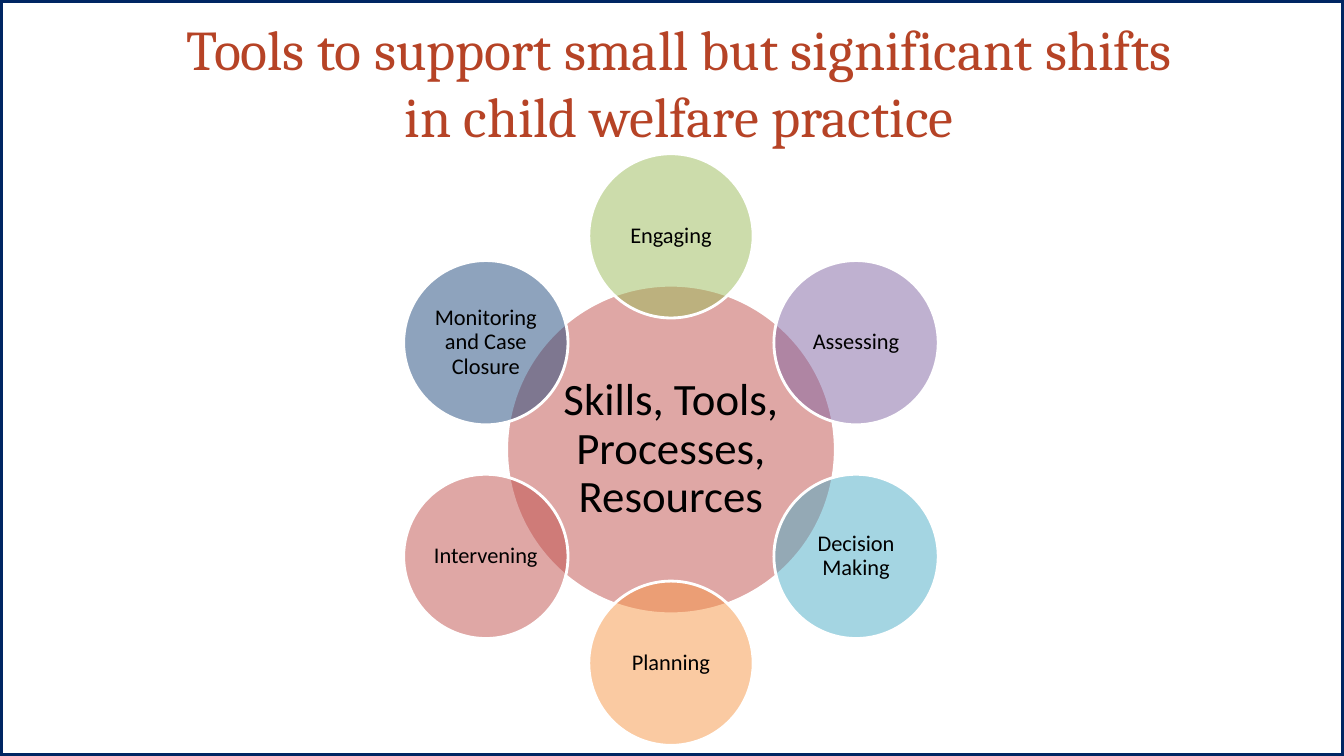
from math import cos, radians, sin

from lxml import etree
from pptx import Presentation
from pptx.dml.color import RGBColor
from pptx.enum.shapes import MSO_SHAPE
from pptx.enum.text import MSO_ANCHOR, PP_ALIGN
from pptx.oxml.ns import qn
from pptx.util import Inches, Pt

# Content
NAVY = RGBColor(0x00, 0x26, 0x63)
RUST = RGBColor(0xB6, 0x43, 0x26)
BLACK = RGBColor(0x00, 0x00, 0x00)
WHITE = RGBColor(0xFF, 0xFF, 0xFF)
RED = RGBColor(0xC0, 0x50, 0x4D)
GREEN = RGBColor(0x9B, 0xBB, 0x59)
PURPLE = RGBColor(0x80, 0x64, 0xA2)
TEAL = RGBColor(0x4B, 0xAC, 0xC6)
ORANGE = RGBColor(0xF7, 0x96, 0x46)
BLUE = RGBColor(0x1F, 0x49, 0x7D)

TITLE = "Tools to support small but significant shifts in child welfare practice"
HUB = "Skills, Tools, Processes, Resources"
STAGES = [  # clockwise from the top
    ("Engaging", GREEN),
    ("Assessing", PURPLE),
    ("Decision Making", TEAL),
    ("Planning", ORANGE),
    ("Intervening", RED),
    ("Monitoring and Case Closure", BLUE),
]

# Geometry in inches
SLIDE_W, SLIDE_H = 13.33, 7.5
CENTER_X, CENTER_Y = SLIDE_W / 2 - 0.01, 4.46
HUB_SIZE = 3.26
STAGE_SIZE = HUB_SIZE / 2
ORBIT = 2.12

presentation = Presentation()
presentation.slide_width = Inches(SLIDE_W)
presentation.slide_height = Inches(SLIDE_H)
slide = presentation.slides.add_slide(presentation.slide_layouts[6])


def write(shape, text, *, font, size, color, inset=None, spacing=None):
    frame = shape.text_frame
    frame.word_wrap = True
    frame.vertical_anchor = MSO_ANCHOR.MIDDLE
    if inset is not None:
        frame.margin_left = frame.margin_right = Inches(inset)
        frame.margin_top = frame.margin_bottom = Inches(inset)
    paragraph = frame.paragraphs[0]
    paragraph.alignment = PP_ALIGN.CENTER
    paragraph.line_spacing = spacing
    run = paragraph.add_run()
    run.text = text
    run.font.name = font
    run.font.size = Pt(size)
    run.font.color.rgb = color


def add_circle(text, color, x, y, diameter, *, size, inset):
    circle = slide.shapes.add_shape(
        MSO_SHAPE.OVAL, Inches(x - diameter / 2), Inches(y - diameter / 2),
        Inches(diameter), Inches(diameter))
    circle.shadow.inherit = False
    circle.fill.solid()
    circle.fill.fore_color.rgb = color
    rgb = circle.fill._xPr.find(qn("a:solidFill")).find(qn("a:srgbClr"))
    etree.SubElement(rgb, qn("a:alpha")).set("val", "50000")
    circle.line.color.rgb = WHITE
    circle.line.width = Pt(2)
    write(circle, text, font="Calibri", size=size, color=BLACK,
          inset=inset, spacing=0.9)


# Slide border
border = slide.shapes.add_shape(
    MSO_SHAPE.RECTANGLE, 0, 0, presentation.slide_width, presentation.slide_height)
border.shadow.inherit = False
border.fill.background()
border.line.color.rgb = NAVY
border.line.width = Pt(4.5)

# Title
title = slide.shapes.add_textbox(Inches(1.49), Inches(0.1), Inches(10.49), Inches(1.42))
write(title, TITLE, font="Cambria", size=40, color=RUST)

# Hub with the stages around it
add_circle(HUB, RED, CENTER_X, CENTER_Y, HUB_SIZE, size=32, inset=0.04)
for index, (stage, color) in enumerate(STAGES):
    angle = radians(360 / len(STAGES) * index)
    add_circle(stage, color, CENTER_X + ORBIT * sin(angle),
               CENTER_Y - ORBIT * cos(angle), STAGE_SIZE, size=16, inset=0.02)

presentation.save("out.pptx")
